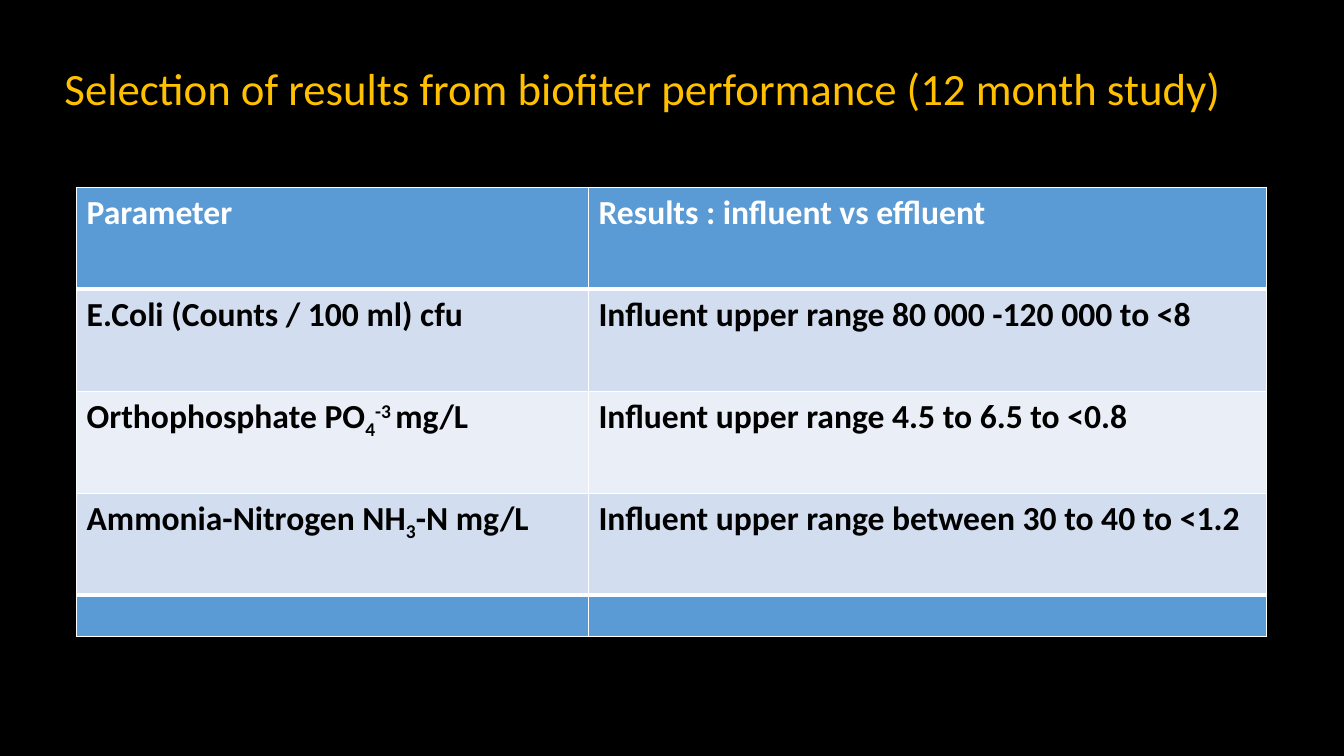
from lxml import etree
from pptx import Presentation
from pptx import util as u
from pptx.dml.color import RGBColor
from pptx.enum import text
from pptx.oxml.ns import qn

WHITE, BLACK, GOLD = "FFFFFF", "000000", "FFC000"
BLUE, BAND_DARK, BAND_LIGHT = "5B9BD5", "D2DEEF", "EAEFF7"
SUB, SUP = -25, 30
THIN, THICK = 1, 3


def colour(value):
    return RGBColor.from_string(value)


def apply(target, values):
    for name, value in values.items():
        setattr(target, name, value)


class SlideBuilder:
    title_style = {"name": "Calibri", "size": u.Pt(32), "bold": False}
    cell_style = {"name": "Calibri", "size": u.Pt(24), "bold": True}

    def __init__(self, deck):
        self.page = deck.slides.add_slide(deck.slide_layouts[5])

    def background(self, fill):
        self.page.background.fill.solid()
        self.page.background.fill.fore_color.rgb = colour(fill)

    def add_spans(self, para, spans, style, ink):
        """Each span is a string or a (string, baseline percent) pair."""
        for item in spans:
            words, baseline = (item, 0) if isinstance(item, str) else item
            span = para.add_run()
            span.text = words
            apply(span.font, style)
            span.font.color.rgb = colour(ink)
            if baseline:
                span._r.get_or_add_rPr().set("baseline", str(baseline * 1000))

    def title(self, words, left, top, width, height):
        box = self.page.shapes.title
        apply(box, {"left": u.Cm(left), "top": u.Cm(top),
                    "width": u.Cm(width), "height": u.Cm(height)})
        apply(box.text_frame, {"word_wrap": False,
                               "vertical_anchor": text.MSO_ANCHOR.TOP,
                               "auto_size": text.MSO_AUTO_SIZE.SHAPE_TO_FIT_TEXT})
        para = box.text_frame.paragraphs[0]
        apply(para, {"alignment": text.PP_ALIGN.LEFT, "line_spacing": 1.0})
        self.add_spans(para, [words], self.title_style, GOLD)

    def borders(self, cell, top=THIN, bottom=THIN):
        properties = cell._tc.get_or_add_tcPr()
        widths = {"lnL": THIN, "lnR": THIN, "lnT": top, "lnB": bottom}
        for side, width in widths.items():
            line = etree.SubElement(properties, qn("a:" + side), w=str(u.Pt(width)))
            fill = etree.SubElement(line, qn("a:solidFill"))
            etree.SubElement(fill, qn("a:srgbClr"), val=WHITE)

    def table(self, rows, fills, left, top, widths, heights):
        frame = self.page.shapes.add_table(
            len(rows), len(widths), u.Cm(left), u.Cm(top),
            u.Cm(sum(widths)), u.Cm(sum(heights)))
        grid = frame.table
        grid.last_row = True
        for column, width in zip(grid.columns, widths):
            column.width = u.Cm(width)
        for r, (row, fill, height) in enumerate(zip(rows, fills, heights)):
            grid.rows[r].height = u.Cm(height)
            for c, spans in enumerate(row):
                cell = grid.cell(r, c)
                self.borders(cell,
                             top=THICK if r == len(rows) - 1 else THIN,
                             bottom=THICK if r == 0 else THIN)
                cell.fill.solid()
                cell.fill.fore_color.rgb = colour(fill)
                self.add_spans(cell.text_frame.paragraphs[0], spans,
                               self.cell_style, WHITE if r == 0 else BLACK)


def main():
    deck = Presentation()
    deck.slide_width, deck.slide_height = u.Cm(33.87), u.Cm(19.05)
    slide = SlideBuilder(deck)
    slide.background(BLACK)

    # Heading
    slide.title("Selection of results from biofiter performance (12 month study)",
                1.37, 1.4, 30.23, 1.63)

    # Results table, closed by an empty total row
    rows = [
        [["Parameter"], ["Results : influent vs effluent"]],
        [["E.Coli (Counts / 100 ml) cfu"],
         ["Influent upper range 80 000 -120 000 to <8"]],
        [["Orthophosphate PO", ("4", SUB), ("-3 ", SUP), "mg/L"],
         ["Influent upper range 4.5 to 6.5 to <0.8"]],
        [["Ammonia-Nitrogen NH", ("3", SUB), "-N mg/L"],
         ["Influent upper range between 30 to 40 to <1.2"]],
        [[], []],
    ]
    fills = [BLUE, BAND_DARK, BAND_LIGHT, BAND_DARK, BLUE]
    slide.table(rows, fills, 1.93, 4.72, [12.9, 17.09], [2.57] * 4 + [1.03])

    deck.save("out.pptx")


if __name__ == "__main__":
    main()
